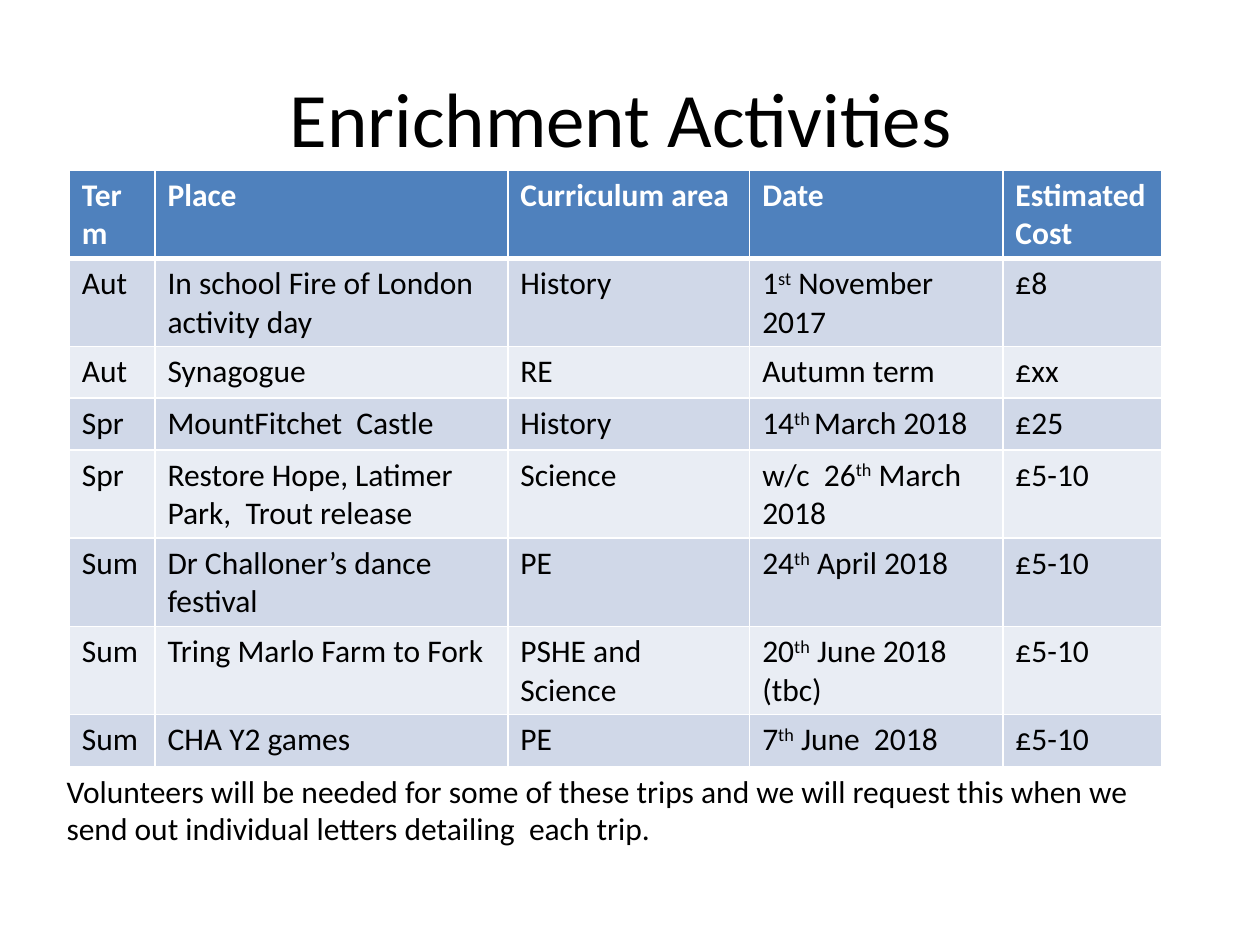
import pptx
import pptx.dml.color
import pptx.enum.text
import pptx.oxml
import pptx.oxml.ns
import pptx.util

WIDE, HIGH = 10, 7.5
BLACK, WHITE, BLUE = "000000", "FFFFFF", "4F81BD"
BANDS = ["D0D8E8", "E9EDF4"]
COLS = [0.68, 2.8, 1.92, 2.01, 1.26]
ROW = 0.41

BODY = {"name": "Calibri", "size": pptx.util.Pt(18), "bold": False}
HEAD = {**BODY, "bold": True}
TITLE = {**BODY, "size": pptx.util.Pt(44)}

# A pair of carets marks raised letters; a line break starts a paragraph
ROWS = [
    ["Term", "Place", "Curriculum area", "Date", "Estimated\nCost"],
    ["Aut", "In school Fire of London activity day", "History",
     "1^st^ November 2017", "£8"],
    ["Aut", "Synagogue", "RE", "Autumn term", "£xx"],
    ["Spr", "MountFitchet  Castle", "History", "14^th ^March 2018", "£25"],
    ["Spr", "Restore Hope, Latimer Park,  Trout release", "Science",
     "w/c  26^th^ March 2018", "£5-10"],
    ["Sum", "Dr Challoner’s dance festival", "PE",
     "24^th^ April 2018", "£5-10"],
    ["Sum", "Tring Marlo Farm to Fork", "PSHE and Science",
     "20^th^ June 2018 (tbc)", "£5-10"],
    ["Sum", "CHA Y2 games", "PE", "7^th^ June  2018", "£5-10"],
]
NOTE = ("Volunteers will be needed for some of these trips and we will request "
        "this when we send out individual letters detailing  each trip.")


def tint(code):
    return pptx.dml.color.RGBColor.from_string(code)


def box(x, y, w, h):
    """Turn shares of the slide's size into lengths."""
    return [pptx.util.Inches(n) for n in (x * WIDE, y * HIGH, w * WIDE, h * HIGH)]


def write(frame, text, style, color):
    for i, line in enumerate(text.split("\n")):
        para = frame.add_paragraph() if i else frame.paragraphs[0]
        for j, part in enumerate(line.split("^")):
            run = para.add_run()
            run.text = part
            for key, value in style.items():
                setattr(run.font, key, value)
            run.font.color.rgb = tint(color)
            if j % 2:
                run._r.get_or_add_rPr().set("baseline", "30000")


def add_text(slide, place, text, style):
    frame = slide.shapes.add_textbox(*box(*place)).text_frame
    frame.word_wrap = True
    write(frame, text, style, BLACK)
    return frame


def rule(cell, base):
    """Draw white borders, with the lower one of the given width."""
    props = cell._tc.get_or_add_tcPr()
    for side, size in {"L": 1, "R": 1, "T": 1, "B": base}.items():
        props.append(pptx.oxml.parse_xml(
            f'<a:ln{side} {pptx.oxml.ns.nsdecls("a")} w="{pptx.util.Pt(size)}">'
            f'<a:solidFill><a:srgbClr val="{WHITE}"/></a:solidFill></a:ln{side}>'))


def add_grid(slide, place):
    grid = slide.shapes.add_table(len(ROWS), len(COLS), *box(*place)).table
    for col, width in zip(grid.columns, COLS):
        col.width = pptx.util.Inches(width)
    for r, texts in enumerate(ROWS):
        grid.rows[r].height = pptx.util.Inches(ROW)
        fill, style, color, base = (
            (BANDS[(r - 1) % 2], BODY, BLACK, 1) if r else (BLUE, HEAD, WHITE, 3))
        for c, text in enumerate(texts):
            cell = grid.cell(r, c)
            write(cell.text_frame, text, style, color)
            rule(cell, base)
            cell.fill.solid()
            cell.fill.fore_color.rgb = tint(fill)
            if r == 1:
                top = cell._tc.tcPr.find(pptx.oxml.ns.qn("a:lnT"))
                top.set("w", str(pptx.util.Pt(3)))


def main():
    deck = pptx.Presentation()
    deck.slide_width = pptx.util.Inches(WIDE)
    deck.slide_height = pptx.util.Inches(HIGH)
    slide = deck.slides.add_slide(deck.slide_layouts[6])

    # Title
    frame = add_text(slide, (0.05, 0.04, 0.9, 1 / 6), "Enrichment Activities ", TITLE)
    frame.vertical_anchor = pptx.enum.text.MSO_ANCHOR.MIDDLE
    frame.paragraphs[0].alignment = pptx.enum.text.PP_ALIGN.CENTER

    # Trips
    add_grid(slide, (0.055, 0.18, sum(COLS) / WIDE, len(ROWS) * ROW / HIGH))

    # Note for parents
    add_text(slide, (0.043, 0.81, 0.913, 0.094), NOTE, BODY)
    deck.save("out.pptx")


if __name__ == "__main__":
    main()
